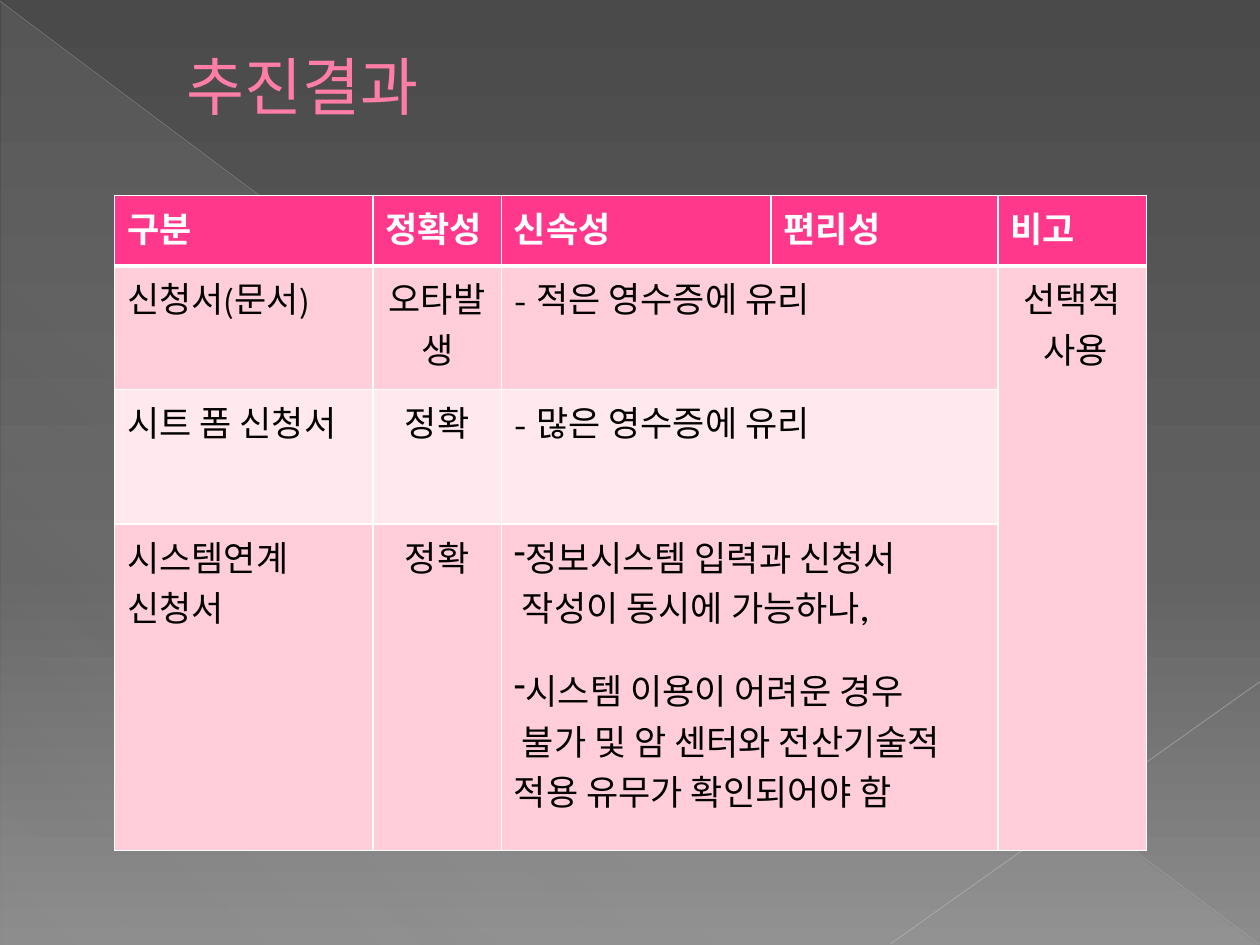
from dataclasses import dataclass

from lxml import etree
from pptx import Presentation
from pptx.dml.color import RGBColor
from pptx.enum.shapes import MSO_CONNECTOR, MSO_SHAPE
from pptx.enum.text import MSO_ANCHOR, MSO_AUTO_SIZE, PP_ALIGN
from pptx.oxml.ns import qn
from pptx.util import Inches, Pt

STRAIGHT = MSO_CONNECTOR.STRAIGHT
TRIANGLE = MSO_SHAPE.RIGHT_TRIANGLE
MIDDLE = MSO_ANCHOR.MIDDLE
NO_FIT = MSO_AUTO_SIZE.NONE
LEFT, CENTER = PP_ALIGN.LEFT, PP_ALIGN.CENTER


@dataclass(frozen=True)
class Theme:
    latin: str = "League Spartan"
    asian: str = "Noto Sans CJK KR"
    title_size: int = 36
    cell_size: int = 20
    gap: int = 18
    title: str = "FF7DA7"
    edge: str = "B12761"
    head: str = "FF388C"
    odd: str = "FFCEDA"
    even: str = "FFE8EE"
    white: str = "FFFFFF"
    black: str = "000000"
    back: tuple = ((0, "4A4A4A", 100), (60, "626262", 100), (100, "8C8C8C", 100))
    glow: tuple = ((0, "D2D2D2", 10), (70, "D2D2D2", 8), (100, "D2D2D2", 1))


HEADS = ["구분", "정확성", "신속성", "편리성", "비고"]
ROWS = [
    [["신청서(문서)"], ["오타발생"], ["- 적은 영수증에 유리"], [], ["선택적", " 사용"]],
    [["시트 폼 신청서"], ["정확"], ["- 많은 영수증에 유리"], [], []],
    [["시스템연계", "신청서"], ["정확"], [], [], []],
]
NOTES = [
    "정보시스템 입력과 신청서",
    " 작성이 동시에 가능하나,",
    "시스템 이용이 어려운 경우",
    " 불가 및 암 센터와 전산기술적 적용 유무가 확인되어야 함",
]
WIDTHS = [2.05, 1.02, 2.14, 1.8, 1.18]
HEIGHTS = [0.56, 0.98, 1.07, 2.59]


def add(parent, tag, **attrs):
    """Append a drawing element with the given attributes."""
    node = etree.SubElement(parent, qn(f"a:{tag}"))
    for key, value in attrs.items():
        node.set(key, str(value))
    return node


def tint(parent, color, alpha=100):
    """Append a colour with its opacity in percent."""
    node = add(parent, "srgbClr", val=color)
    if alpha < 100:
        add(node, "alpha", val=alpha * 1000)


class Deck:
    """Hold the style and the current slide."""

    def __init__(self, theme):
        """Start a deck with one title slide."""
        self.theme = theme
        self.file = Presentation()
        self.file.slide_width, self.file.slide_height = Inches(10), Inches(7.5)
        self.slide = self.file.slides.add_slide(self.file.slide_layouts[5])

    def grade(self, fill, root, stops, angle):
        """Give a fill a gradient of any number of stops."""
        fill.gradient()
        grad = root.find(".//" + qn("a:gradFill"))
        for child in list(grad):
            grad.remove(child)
        group = add(grad, "gsLst")
        for place, color, alpha in stops:
            tint(add(group, "gs", pos=place * 1000), color, alpha)
        add(grad, "lin", ang=angle * 60000, scaled=0)

    def backdrop(self):
        """Shade the slide background."""
        ground = self.slide.background
        self.grade(ground.fill, self.slide.element, self.theme.back, 90)

    def wedge(self, *box):
        """Draw the pale corner triangle."""
        shape = self.slide.shapes.add_shape(TRIANGLE, *map(Inches, box))
        shape.shadow.inherit = False
        shape.line.fill.background()
        self.grade(shape.fill, shape.element.spPr, self.theme.glow, 133)

    def line(self, ends, color, width, alpha):
        """Draw a thin translucent line."""
        line = self.slide.shapes.add_connector(STRAIGHT, *map(Inches, ends))
        line.line.width = Pt(width)
        line.line.color.rgb = RGBColor.from_string(color)
        props = line.element.spPr
        add(props.find(".//" + qn("a:srgbClr")), "alpha", val=alpha * 1000)
        add(props, "effectLst")

    def style(self, run, size, color, bold=False):
        """Format a run with both fonts."""
        font = run.font
        font.size, font.bold = Pt(size), bold
        font.color.rgb = RGBColor.from_string(color)
        font.name = self.theme.latin
        add(font._element, "ea", typeface=self.theme.asian)

    def title(self, text, *box):
        """Fill the title placeholder and lift it above the backdrop."""
        shape = self.slide.shapes.title
        shape.left, shape.top, shape.width, shape.height = map(Inches, box)
        frame = shape.text_frame
        frame.text = text
        frame.vertical_anchor, frame.auto_size = MIDDLE, NO_FIT
        para = frame.paragraphs[0]
        para.alignment = LEFT
        run = para.runs[0]
        self.style(run, self.theme.title_size, self.theme.title)
        edge = add(run.font._element, "ln", w=Pt(0.5))
        tint(add(edge, "solidFill"), self.theme.edge)
        run.font._element.insert(0, edge)
        self.slide.shapes._spTree.append(shape.element)

    def cell(self, cell, lines, fill, color, bold, align):
        """Write, border and fill one table cell."""
        cell.text_frame.text = "\n".join(lines)
        for para in cell.text_frame.paragraphs:
            para.alignment = align
            for run in para.runs:
                self.style(run, self.theme.cell_size, color, bold)
        props = cell._tc.get_or_add_tcPr()
        for side in "LRTB":
            width = 3 if bold and side == "B" else 1
            edge = add(props, f"ln{side}", w=Pt(width))
            tint(add(edge, "solidFill"), self.theme.white)
        cell.fill.solid()
        cell.fill.fore_color.rgb = RGBColor.from_string(fill)

    def table(self, left, top):
        """Add the comparison table with its merged cells."""
        theme = self.theme
        rows = [[[head] for head in HEADS], *ROWS]
        rows[3][2] = NOTES
        box = map(Inches, (left, top, sum(WIDTHS), sum(HEIGHTS)))
        grid = self.slide.shapes.add_table(len(rows), len(HEADS), *box).table
        for col, width in zip(grid.columns, WIDTHS):
            col.width = Inches(width)
        for row, height in zip(grid.rows, HEIGHTS):
            row.height = Inches(height)
        for r, row in enumerate(rows):
            first = r == 0
            fill = theme.head if first else theme.odd if r % 2 else theme.even
            color = theme.white if first else theme.black
            for c, lines in enumerate(row):
                align = CENTER if r and c in (1, 4) else LEFT
                shade = theme.odd if r and c == 4 else fill
                self.cell(grid.cell(r, c), lines, shade, color, first, align)
        for r in range(1, len(rows)):
            grid.cell(r, 2).merge(grid.cell(r, 3))
        grid.cell(1, 4).merge(grid.cell(3, 4))
        notes = grid.cell(3, 2).text_frame.paragraphs
        for para in notes[::2]:
            add(para._p.get_or_add_pPr(), "buChar", char="-")
        notes[2].space_before = Pt(theme.gap)


def main():
    """Build and save the slide."""
    deck = Deck(Theme())
    deck.backdrop()
    deck.wedge(0.01, 0.02, 9.98, 7.48)
    deck.line((0, 0.01, 9.99, 7.49), "BFBFBF", 0.39, 35)
    deck.line((10, 5.41, 7.07, 7.49), "C6C6C6", 0.47, 45)
    deck.title("추진결과", 1.38, 0.21, 7.01, 0.94)
    deck.table(0.91, 1.55)
    deck.file.save("out.pptx")


if __name__ == "__main__":
    main()
